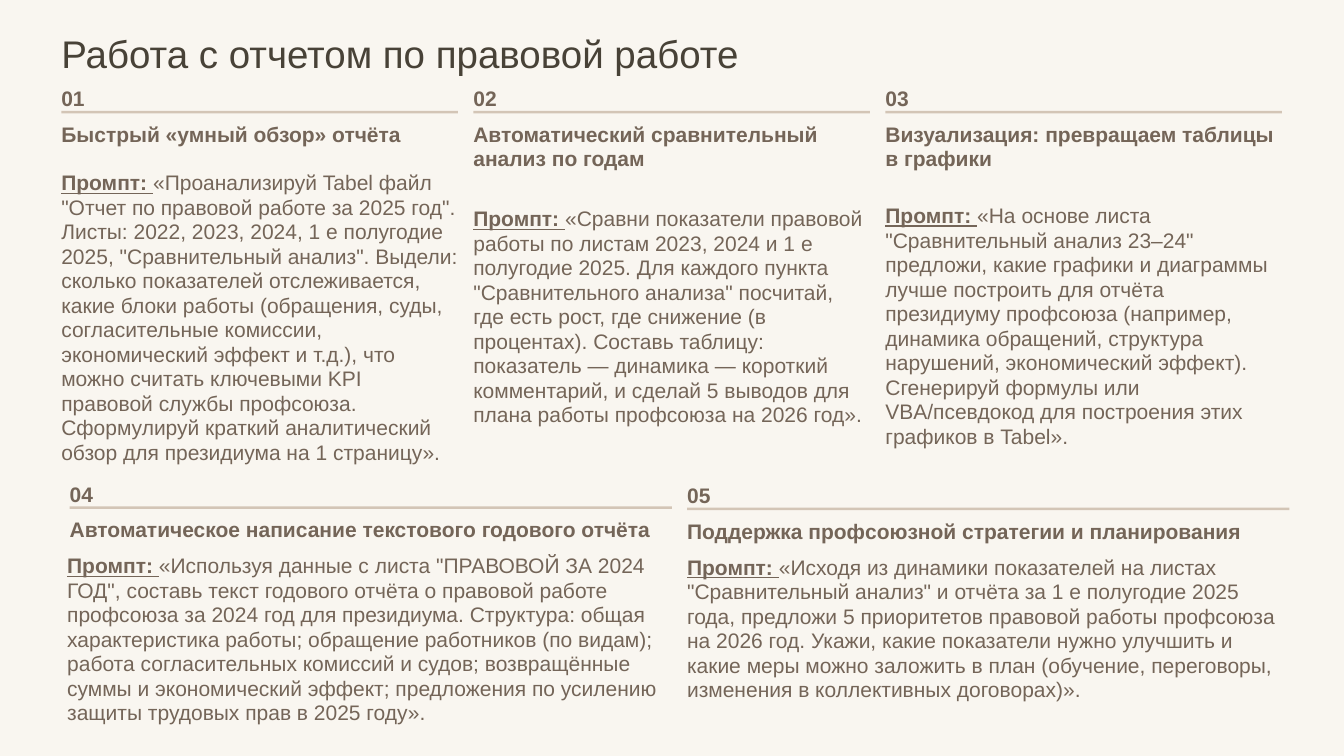
import pptx
import pptx.dml.color
import pptx.enum.shapes
import pptx.enum.text
import pptx.util

Inches, Pt = pptx.util.Inches, pptx.util.Pt
RGBColor = pptx.dml.color.RGBColor

CREAM = RGBColor(0xF9, 0xF6, 0xF0)
DARK = RGBColor(0x48, 0x42, 0x37)
BROWN = RGBColor(0x74, 0x65, 0x58)
SAND = RGBColor(0xD3, 0xC5, 0xB6)
FONT = "Arial"

# Content
TITLE = "Работа с отчетом по правовой работе"
PROMPT_LABEL = "Промпт: "

# Each card: heading, prompt, prompt left shift, prompt top below the number, prompt height
TOP_CARDS = [
    ("Быстрый «умный обзор» отчёта",
     '«Проанализируй Tabel файл "Отчет по правовой работе за 2025 год". '
     'Листы: 2022, 2023, 2024, 1 е полугодие 2025, "Сравнительный анализ". '
     'Выдели: сколько показателей отслеживается, какие блоки работы (обращения, '
     'суды, согласительные комиссии, экономический эффект и т.д.), что можно '
     'считать ключевыми KPI правовой службы профсоюза. Сформулируй краткий '
     'аналитический обзор для президиума на 1 страницу».', 0, 1.0, 3.3),
    ("Автоматический сравнительный анализ по годам",
     '«Сравни показатели правовой работы по листам 2023, 2024 и 1 е полугодие '
     '2025. Для каждого пункта "Сравнительного анализа" посчитай, где есть рост, '
     'где снижение (в процентах). Составь таблицу: показатель — динамика — '
     'короткий комментарий, и сделай 5 выводов для плана работы профсоюза '
     'на 2026 год».', 0, 1.43, 2.05),
    ("Визуализация: превращаем таблицы в графики",
     '«На основе листа "Сравнительный анализ 23–24" предложи, какие графики и '
     'диаграммы лучше построить для отчёта президиуму профсоюза (например, '
     'динамика обращений, структура нарушений, экономический эффект). '
     'Сгенерируй формулы или VBA/псевдокод для построения этих графиков '
     'в Tabel».', 0, 1.39, 2.05),
]
BOTTOM_CARDS = [
    ("Автоматическое написание текстового годового отчёта",
     '«Используя данные с листа "ПРАВОВОЙ ЗА 2024 ГОД", составь текст годового '
     'отчёта о правовой работе профсоюза за 2024 год для президиума. Структура: '
     'общая характеристика работы; обращение работников (по видам); работа '
     'согласительных комиссий и судов; возвращённые суммы и экономический '
     'эффект; предложения по усилению защиты трудовых прав в 2025 году».',
     -0.03, 0.85, 1.76),
    ("Поддержка профсоюзной стратегии и планирования",
     '«Исходя из динамики показателей на листах "Сравнительный анализ" и отчёта '
     'за 1 е полугодие 2025 года, предложи 5 приоритетов правовой работы '
     'профсоюза на 2026 год. Укажи, какие показатели нужно улучшить и какие '
     'меры можно заложить в план (обучение, переговоры, изменения в '
     'коллективных договорах)».', 0, 0.85, 1.47),
]

# Each row: cards, left, top, card width, column pitch, step down per column
ROWS = [
    (TOP_CARDS, 0.73, 1.03, 4.72, 4.905, 0),
    (BOTTOM_CARDS, 0.83, 5.74, 7.17, 7.35, 0.015),
]

presentation = pptx.Presentation()
presentation.slide_width, presentation.slide_height = Inches(16), Inches(9)
slide = presentation.slides.add_slide(presentation.slide_layouts[5])
slide.background.fill.solid()
slide.background.fill.fore_color.rgb = CREAM


def fill_text(holder, runs, size, color, spacing):
    """Write (text, bold, underline) runs into one left-aligned paragraph."""
    frame = holder.text_frame
    frame.word_wrap = True
    frame.auto_size = pptx.enum.text.MSO_AUTO_SIZE.NONE
    frame.vertical_anchor = pptx.enum.text.MSO_ANCHOR.TOP
    frame.margin_left = frame.margin_right = 0
    frame.margin_top = frame.margin_bottom = 0
    paragraph = frame.paragraphs[0]
    paragraph.alignment = pptx.enum.text.PP_ALIGN.LEFT
    paragraph.line_spacing = Pt(spacing)
    paragraph.font.name = FONT
    paragraph.font.size = Pt(size)
    paragraph.font.color.rgb = color
    for text, bold, underline in runs:
        run = paragraph.add_run()
        run.text = text
        run.font.bold = bold
        run.font.underline = underline


def add_text(left, top, width, height, runs, spacing=21):
    box = slide.shapes.add_textbox(*map(Inches, (left, top, width, height)))
    fill_text(box, runs, 18, BROWN, spacing)


def add_card(number, left, top, width, card):
    heading, prompt, prompt_shift, prompt_drop, prompt_height = card
    add_text(left, top, width, 0.23, [(f"{number:02}", True, False)])
    rule = slide.shapes.add_shape(
        pptx.enum.shapes.MSO_SHAPE.RECTANGLE,
        *map(Inches, (left, top + 0.29, width, 0.03)))
    rule.shadow.inherit = False
    rule.fill.solid()
    rule.fill.fore_color.rgb = SAND
    rule.line.fill.background()
    add_text(left, top + 0.43, width, 0.57, [(heading, True, False)], 20.5)
    add_text(left + prompt_shift, top + prompt_drop, width, prompt_height,
             [(PROMPT_LABEL, True, True), (prompt, False, False)])


# Title
title = slide.shapes.title
title.left, title.top, title.width, title.height = map(Inches, (0.73, 0.34, 8.5, 0.57))
fill_text(title, [(TITLE, False, False)], 33, DARK, 41)

# Numbered cards
number = 1
for cards, left, top, width, pitch, step in ROWS:
    for column, card in enumerate(cards):
        add_card(number, left + column * pitch, top + column * step, width, card)
        number += 1

presentation.save("out.pptx")
